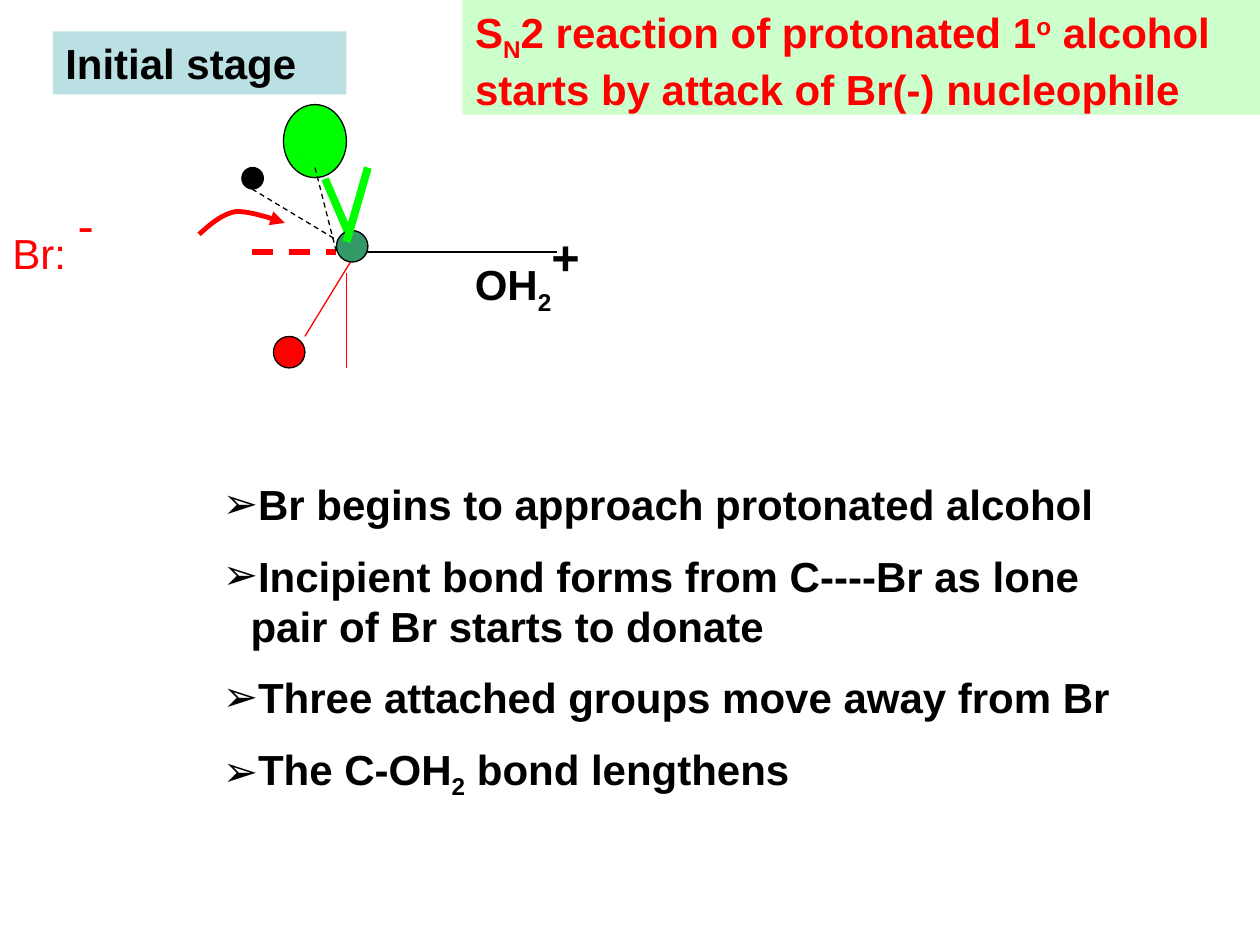
from dataclasses import dataclass
from lxml import etree
from pptx import Presentation
from pptx.dml.color import RGBColor
from pptx.enum.dml import MSO_LINE
from pptx.enum.shapes import MSO_CONNECTOR, MSO_SHAPE
from pptx.enum.text import MSO_ANCHOR, MSO_AUTO_SIZE, PP_ALIGN
from pptx.oxml.ns import qn
from pptx.util import Inches, Pt

STRAIGHT, OVAL, DASH = MSO_CONNECTOR.STRAIGHT, MSO_SHAPE.OVAL, MSO_LINE.DASH
TOP, LEFT, NO_FIT = MSO_ANCHOR.TOP, PP_ALIGN.LEFT, MSO_AUTO_SIZE.NONE


@dataclass(frozen=True)
class Theme:
    font: str = "Arial"
    black: str = "000000"
    red: str = "FF0000"
    green: str = "00FF00"
    carbon: str = "339966"
    title_fill: str = "CCFFCC"
    stage_fill: str = "BBE0E3"
    body: int = 24
    charge: int = 48
    gap: int = 12
    hairline: float = 0.75
    bond: float = 4.5
    forming: float = 3
    arrow: float = 2.75


T = Theme()
SLIDE = (10, 7.5)
SUB, SUPER = -25, 30
HANG = 0.22

TITLE = [[("S",), ("N", SUB), ("2 reaction of protonated 1",), ("o", SUPER),
          (" alcohol starts by attack of Br(-) nucleophile",)]]
STAGE = [[("Initial stage",)]]
BROMIDE = [[("Br: ",), ("-", SUPER, T.charge)]]
LEAVING_GROUP = [[("OH",), ("2", SUB), ("+", SUPER, T.charge)]]
STEPS = [
    [("Br begins to approach protonated alcohol",)],
    [("Incipient bond forms from C----Br as lone pair of Br starts to donate",)],
    [("Three attached groups move away from Br",)],
    [("The C-OH",), ("2", SUB), (" bond lengthens",)],
]

CENTRE = (2.83, 2)
BACK_BONDS = [
    ((2, 1.5), CENTRE, T.black, T.hairline, True),
    (CENTRE, (2.42, 2.67), T.red, T.hairline, False),
    (CENTRE, (2.58, 1.42), T.green, T.bond, False),
    (CENTRE, (4.42, 2), T.black, T.hairline, False),
]
FRONT_BONDS = [
    ((2, 2), (2.67, 2), T.red, T.forming, True),
    ((2.75, 1.92), (2.92, 1.33), T.green, T.bond, False),
    ((2.75, 2.17), (2.75, 2.92), T.red, T.hairline, False),
    ((2.5, 1.33), (2.67, 2), T.black, T.hairline, True),
]
ATOMS = [
    ((2.17, 2.67, 0.25, 0.25), T.red),
    ((1.92, 1.33, 0.17, 0.17), T.black),
    ((2.25, 0.83, 0.5, 0.58), T.green),
    ((2.67, 1.83, 0.25, 0.25), T.carbon),
]
ATTACK_CURVES = [
    ((1.58, 1.86), (1.67, 1.78), (1.76, 1.7), (1.87, 1.68)),
    ((1.87, 1.68), (1.99, 1.67), (2.26, 1.77), (2.26, 1.77)),
]
CURVE_STEPS = 12


def rgb(color):
    return RGBColor.from_string(color)


def box(values):
    return [Inches(v) for v in values]


def paint(shape, color):
    shape.fill.solid()
    shape.fill.fore_color.rgb = rgb(color)


def stroke(shape, color, width):
    shape.line.color.rgb = rgb(color)
    shape.line.width = Pt(width)


def write(shape, paragraphs, color=T.black, bold=True, bullet=None):
    frame = shape.text_frame
    frame.word_wrap = True
    frame.auto_size = NO_FIT
    frame.vertical_anchor = TOP
    for index, runs in enumerate(paragraphs):
        paragraph = frame.add_paragraph() if index else frame.paragraphs[0]
        paragraph.alignment = LEFT
        if index:
            paragraph.space_before = Pt(T.gap)
        if bullet:
            props = paragraph._p.get_or_add_pPr()
            props.set("marL", str(Inches(HANG)))
            props.set("indent", str(-Inches(HANG)))
            etree.SubElement(props, qn("a:buFont")).set("typeface", T.font)
            etree.SubElement(props, qn("a:buChar")).set("char", bullet)
        for text, baseline, size in ((*run, 0, T.body)[:3] if len(run) != 2
                                     else (*run, T.body) for run in runs):
            run = paragraph.add_run()
            run.text = text
            font = run.font
            font.name, font.size, font.bold = T.font, Pt(size), bold
            font.color.rgb = rgb(color)
            if baseline:
                run._r.get_or_add_rPr().set("baseline", str(baseline * 1000))


def add_text(slide, place, paragraphs, **style):
    label = slide.shapes.add_textbox(*box(place))
    write(label, paragraphs, **style)
    return label


def add_bonds(slide, bonds):
    for start, end, color, width, dashed in bonds:
        bond = slide.shapes.add_connector(STRAIGHT, *box(start + end))
        stroke(bond, color, width)
        if dashed:
            bond.line.dash_style = DASH
        etree.SubElement(bond._element.spPr, qn("a:effectLst"))


def curve_point(curve, t):
    weights = ((1 - t) ** 3, 3 * t * (1 - t) ** 2, 3 * t * t * (1 - t), t ** 3)
    return tuple(Inches(sum(w * p[axis] for w, p in zip(weights, curve)))
                 for axis in (0, 1))


def add_attack_arrow(slide):
    points = [curve_point(curve, step / CURVE_STEPS)
              for curve in ATTACK_CURVES for step in range(1, CURVE_STEPS + 1)]
    builder = slide.shapes.build_freeform(*curve_point(ATTACK_CURVES[0], 0))
    builder.add_line_segments(points, close=False)
    arrow = builder.convert_to_shape()
    arrow.shadow.inherit = False
    arrow.fill.background()
    stroke(arrow, T.red, T.arrow)
    etree.SubElement(arrow.line._get_or_add_ln(), qn("a:tailEnd")).set("type", "triangle")


def main():
    deck = Presentation()
    deck.slide_width, deck.slide_height = box(SLIDE)
    slide = deck.slides.add_slide(deck.slide_layouts[5])

    title = slide.shapes.title
    title.left, title.top, title.width, title.height = box((3.67, 0, 6.33, 0.91))
    paint(title, T.title_fill)
    write(title, TITLE, color=T.red)

    add_bonds(slide, BACK_BONDS)
    add_text(slide, (0, 1.42, 1, 0.9), BROMIDE, color=T.red, bold=False)
    add_text(slide, (3.67, 1.67, 1.25, 0.63), LEAVING_GROUP)
    paint(add_text(slide, (0.42, 0.25, 2.33, 0.5), STAGE), T.stage_fill)
    for place, color in ATOMS:
        atom = slide.shapes.add_shape(OVAL, *box(place))
        atom.shadow.inherit = False
        paint(atom, color)
        stroke(atom, T.black, T.hairline)
    add_text(slide, (1.67, 3.75, 7.25, 3.03), STEPS, bullet="➢")
    add_bonds(slide, FRONT_BONDS)
    add_attack_arrow(slide)
    deck.save("out.pptx")


if __name__ == "__main__":
    main()
